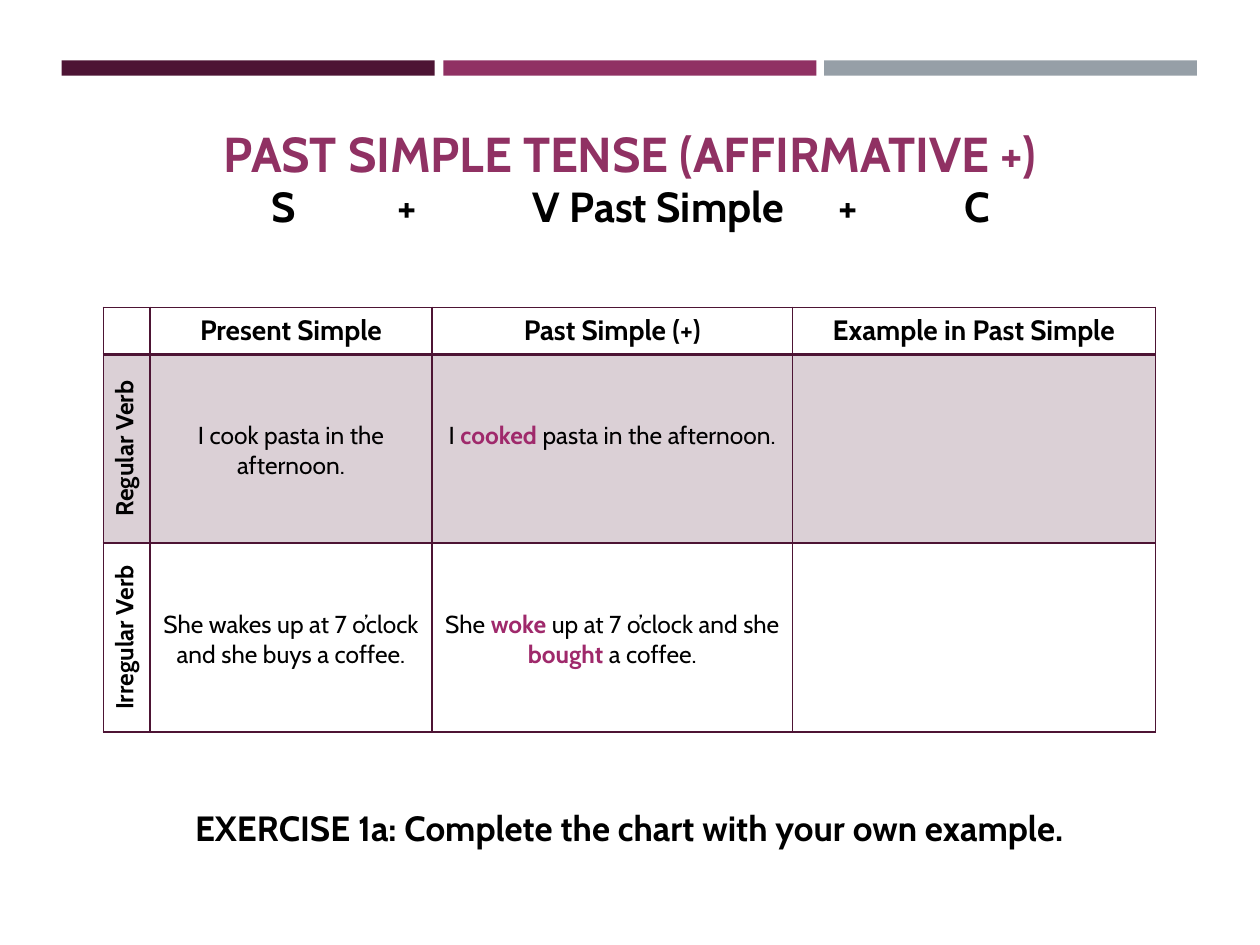
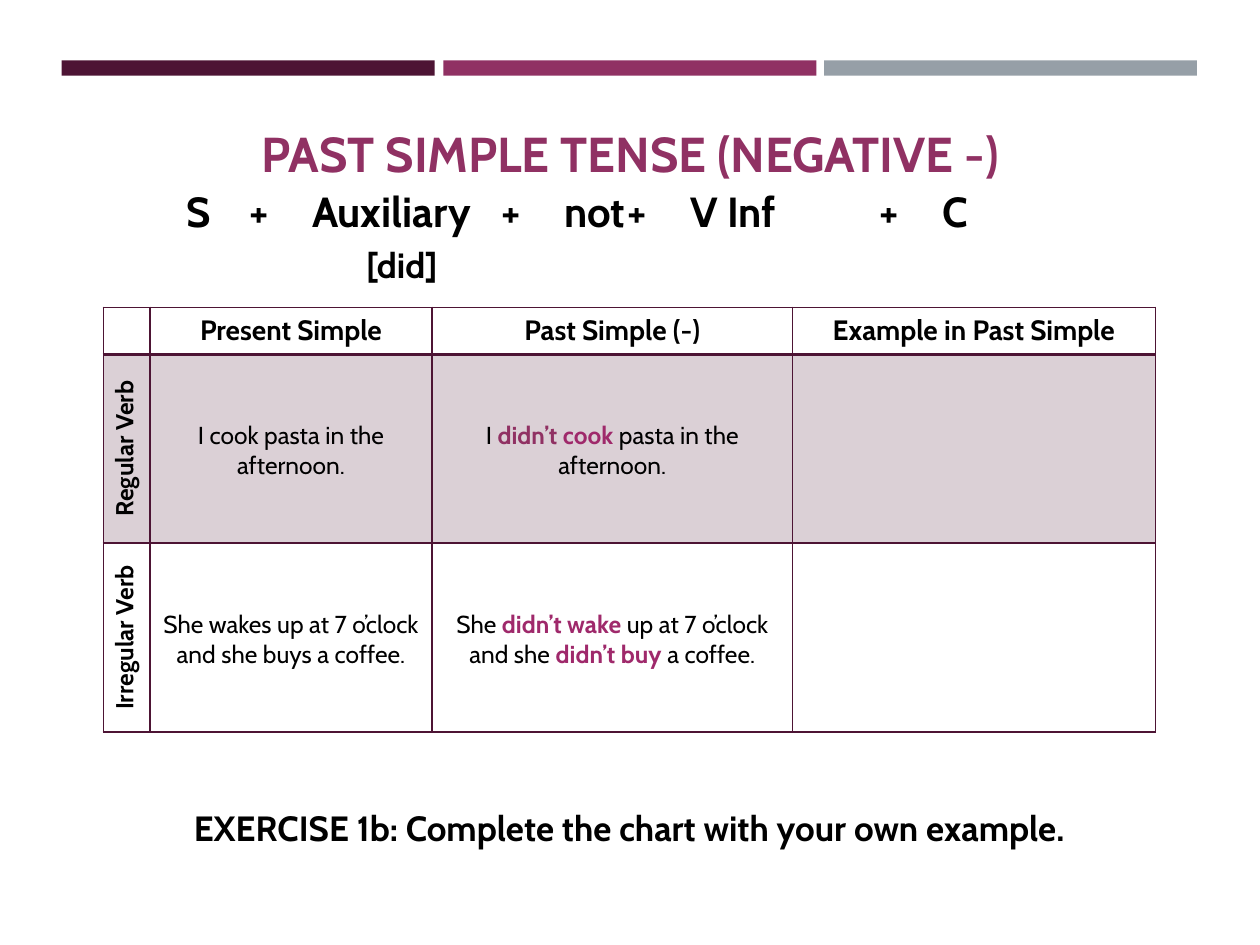
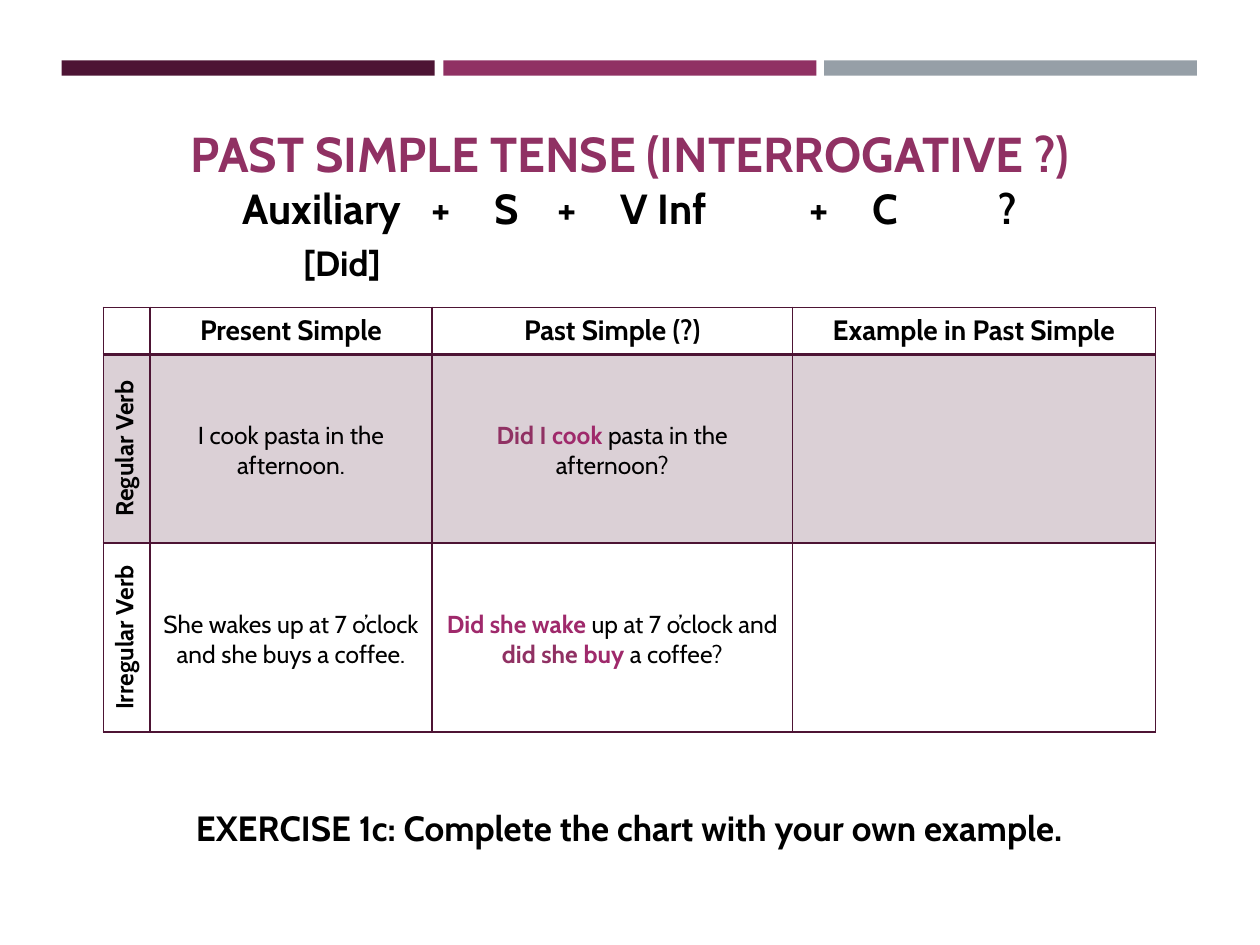
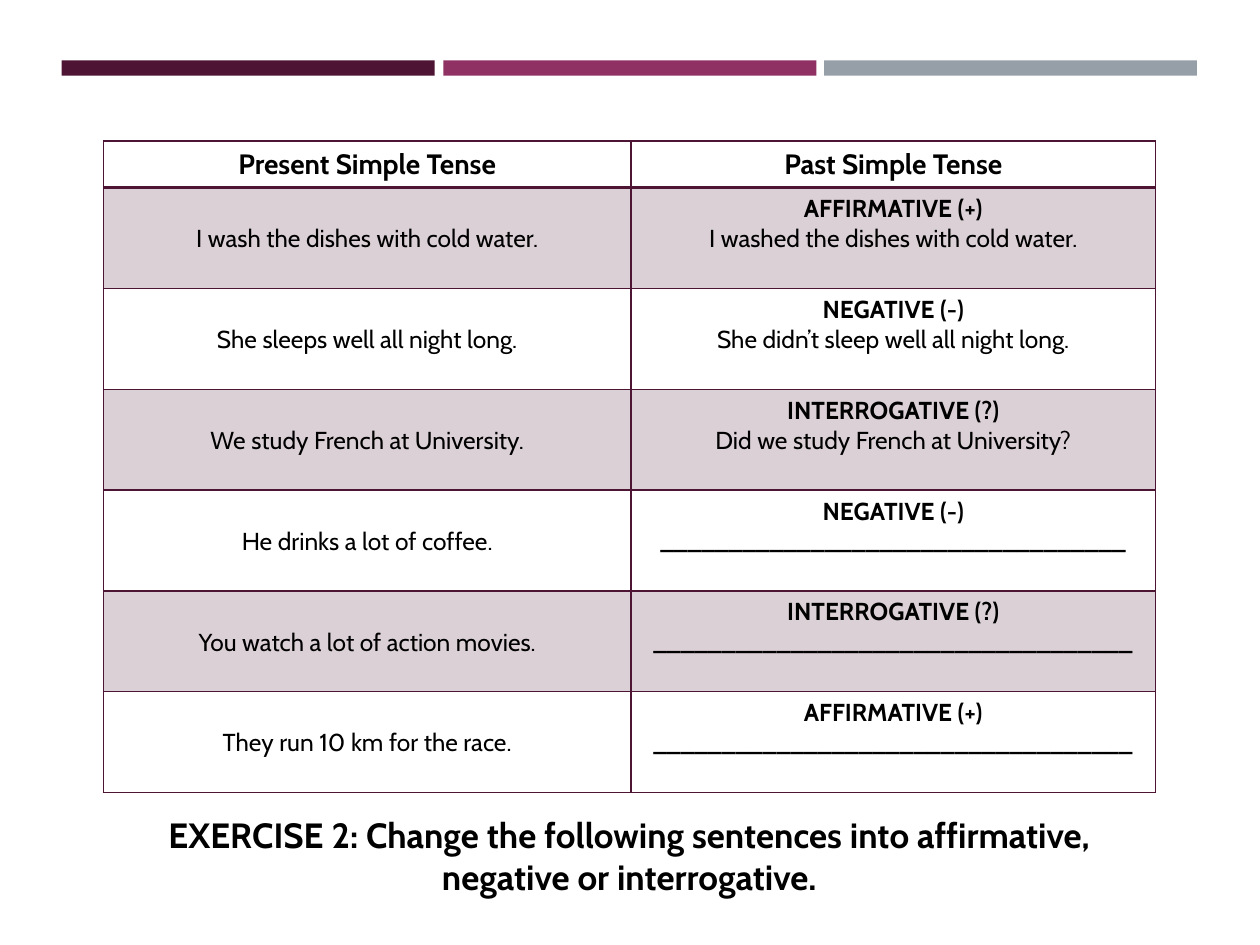
import pptx
import pptx.util
import pptx.dml.color
import pptx.enum.shapes
import pptx.enum.text
import pptx.oxml
import pptx.oxml.ns
import lxml.etree

Inches = pptx.util.Inches
qn = pptx.oxml.ns.qn
ALIGN = pptx.enum.text.PP_ALIGN
ANCHOR = pptx.enum.text.MSO_ANCHOR

COLORS = {
    "plum": "4D1434",
    "berry": "903163",
    "gray": "969FA7",
    "accent": "9F296B",
    "black": "000000",
}
BARS = [("plum", 0.49), ("berry", 3.52), ("gray", 6.54)]
TEXT_STYLES = {
    "title": {"size": 28, "color": "berry", "bold": True},
    "formula": {"size": 24, "color": "black", "bold": True},
    "exercise": {"size": 20, "color": "black", "bold": True},
    "header": {"size": 16, "color": "black", "bold": True},
    "label": {"size": 14, "color": "black", "bold": True},
    "body": {"size": 14, "color": "black", "bold": False},
    "accent": {"size": 14, "color": "accent", "bold": True},
    "berry": {"size": 14, "color": "berry", "bold": True},
}
LINE_HEIGHT = 0.24
REGULAR = [("I cook pasta in the afternoon.", "body")]
IRREGULAR = [("She wakes up at 7 o’clock and she buys a coffee.", "body")]

LESSONS = [
    {
        "kind": "AFFIRMATIVE +",
        "sign": "+",
        "exercise": "1a",
        "formulas": [
            ("S\t\t+\t\t V Past Simple\t+\t\tC", "formula", (1.47, 1.38, 7.07, 0.5), ALIGN.CENTER),
        ],
        "regular": [("I ", "body"), ("cooked", "accent"), (" pasta in the afternoon.", "body")],
        "irregular": [
            ("She ", "body"), ("woke", "accent"), (" up at 7 o’clock and she ", "body"),
            ("bought", "accent"), (" a coffee.", "body"),
        ],
    },
    {
        "kind": "NEGATIVE -",
        "sign": "-",
        "exercise": "1b",
        "formulas": [
            ("S\t+\tAuxiliary\t+\tnot\t+\tV Inf\t\t+\tC", "formula", (1.38, 1.42, 8.16, 0.5), ALIGN.LEFT),
            ("[did]", "exercise", (2.81, 1.88, 1.03, 0.44), ALIGN.LEFT),
        ],
        "regular": [
            ("I ", "body"), ("didn’t ", "berry"), ("cook", "accent"),
            (" pasta in the afternoon.", "body"),
        ],
        "irregular": [
            ("She ", "body"), ("didn’t wake", "accent"), (" up at 7 o’clock and she ", "body"),
            ("didn’t buy", "accent"), (" a coffee.", "body"),
        ],
    },
    {
        "kind": "INTERROGATIVE ?",
        "sign": "?",
        "exercise": "1c",
        "formulas": [
            ("Auxiliary\t+\tS\t+\tV Inf\t\t+\tC\t\t?", "formula", (1.28, 1.4, 7.44, 0.5), ALIGN.CENTER),
            ("[Did]", "exercise", (2.31, 1.87, 1.03, 0.44), ALIGN.LEFT),
        ],
        "regular": [("Did I ", "berry"), ("cook", "accent"), (" pasta in the afternoon?", "body")],
        "irregular": [
            ("Did she wake", "accent"), (" up at 7 o’clock and ", "body"),
            ("did she ", "berry"), ("buy", "accent"), (" a coffee?", "body"),
        ],
    },
]
PRACTICE = [
    ("I wash the dishes with cold water.", "AFFIRMATIVE (+)", "I washed the dishes with cold water.", "body"),
    ("She sleeps well all night long.", "NEGATIVE (-)", "She didn’t sleep well all night long.", "body"),
    ("We study French at University.", "INTERROGATIVE (?)", "Did we study French at University?", "body"),
    ("He drinks a lot of coffee.", "NEGATIVE (-)", "_" * 34, "label"),
    ("You watch a lot of action movies.", "INTERROGATIVE (?)", "_" * 35, "label"),
    ("They run 10 km for the race.", "AFFIRMATIVE (+)", "_" * 35, "label"),
]

pages = []
for lesson in LESSONS:
    headers = ["Present Simple", f"Past Simple ({lesson['sign']})", "Example in Past Simple"]
    pages.append({
        "texts": [
            (f"PAST SIMPLE TENSE ({lesson['kind']})", "title", (0.63, 0.93, 8.74, 0.71), ALIGN.CENTER),
            *lesson["formulas"],
            (f"EXERCISE {lesson['exercise']}: Complete the chart with your own example.",
             "exercise", (1.02, 6.35, 7.95, 0.44), ALIGN.CENTER),
        ],
        "top": 2.44,
        "columns": [0.37, 2.24, 2.86, 2.88],
        "row_height": 1.5,
        "offsets": [0, 2, 2, 0],
        "vertical_labels": True,
        "rows": [
            [[]] + [[[(header, "header")]] for header in headers],
            [[[("Regular Verb", "label")]], [REGULAR], [lesson["regular"]], []],
            [[[("Irregular Verb", "label")]], [IRREGULAR], [lesson["irregular"]], []],
        ],
    })
pages.append({
    "texts": [
        ("EXERCISE 2: Change the following sentences into affirmative, negative or interrogative.",
         "exercise", (1.02, 6.57, 7.95, 0.44), ALIGN.CENTER),
    ],
    "top": 1.12,
    "columns": [4.19, 4.16],
    "row_height": 0.8,
    "offsets": [1, 0],
    "vertical_labels": False,
    "rows": [[[[("Present Simple Tense", "header")]], [[("Past Simple Tense", "header")]]]] + [
        [[[(sentence, "body")]], [[(form, "label")], [(answer, style)]]]
        for sentence, form, answer, style in PRACTICE
    ],
})


def write_text(text_frame, paragraphs, alignment):
    for index, runs in enumerate(paragraphs):
        paragraph = text_frame.add_paragraph() if index else text_frame.paragraphs[0]
        paragraph.alignment = alignment
        paragraph._p.get_or_add_pPr().set("defTabSz", str(Inches(0.5)))
        for text, style_name in runs:
            style = TEXT_STYLES[style_name]
            run = paragraph.add_run()
            run.text = text
            values = {"name": "Cabin", "size": pptx.util.Pt(style["size"]), "bold": style["bold"]}
            for name, value in values.items():
                setattr(run.font, name, value)
            run.font.color.rgb = pptx.dml.color.RGBColor.from_string(COLORS[style["color"]])


def format_cell(cell, row_index):
    if row_index % 2:
        cell.fill.solid()
        cell.fill.fore_color.rgb = pptx.dml.color.RGBColor.from_string(COLORS["plum"])
        color = cell._tc.tcPr.find(qn("a:solidFill"))[0]
        lxml.etree.SubElement(color, qn("a:alpha"), val="20000")
    else:
        cell.fill.background()
    widths = {"L": 1, "R": 1, "T": 2 if row_index == 1 else 1, "B": 2 if row_index == 0 else 1}
    for position, (side, width) in enumerate(widths.items()):
        border = pptx.oxml.parse_xml(
            f'<a:ln{side} xmlns:a="http://schemas.openxmlformats.org/drawingml/2006/main" '
            f'w="{pptx.util.Pt(width)}"><a:solidFill><a:srgbClr val="{COLORS["plum"]}"/>'
            f'</a:solidFill></a:ln{side}>'
        )
        cell._tc.tcPr.insert(position, border)


presentation = pptx.Presentation()
presentation.slide_width = Inches(10)
presentation.slide_height = Inches(7.5)

for page in pages:
    slide = presentation.slides.add_slide(presentation.slide_layouts[6])

    for color, left in BARS:
        bar = slide.shapes.add_shape(
            pptx.enum.shapes.MSO_SHAPE.RECTANGLE, Inches(left), Inches(0.48), Inches(2.96), Inches(0.12)
        )
        bar.shadow.inherit = False
        bar.fill.solid()
        bar.fill.fore_color.rgb = pptx.dml.color.RGBColor.from_string(COLORS[color])
        bar.line.fill.background()

    for text, style_name, box, alignment in page["texts"]:
        text_box = slide.shapes.add_textbox(*[Inches(length) for length in box])
        text_box.text_frame.word_wrap = True
        if text.startswith("EXERCISE"):
            text_box.text_frame.vertical_anchor = ANCHOR.MIDDLE
        write_text(text_box.text_frame, [[(text, style_name)]], alignment)

    rows = page["rows"]
    heights = [0.37] + [page["row_height"]] * (len(rows) - 1)
    table = slide.shapes.add_table(
        len(rows), len(page["columns"]), Inches(0.82), Inches(page["top"]),
        Inches(sum(page["columns"])), Inches(sum(heights))
    ).table
    table.first_row = False
    table.horz_banding = False
    for column, width in zip(table.columns, page["columns"]):
        column.width = Inches(width)
    for row, height in zip(table.rows, heights):
        row.height = Inches(height)

    for row_index, contents in enumerate(rows):
        for column_index, paragraphs in enumerate(contents):
            cell = table.cell(row_index, column_index)
            format_cell(cell, row_index)
            write_text(cell.text_frame, paragraphs, ALIGN.CENTER)
            if not paragraphs:
                lxml.etree.SubElement(cell.text_frame.paragraphs[0]._p, qn("a:endParaRPr"), sz="1400")
            if row_index:
                cell.margin_top = Inches(0.05 + LINE_HEIGHT * page["offsets"][column_index])
                if page["vertical_labels"] and column_index == 0:
                    cell._tc.tcPr.set("vert", "vert270")

presentation.save("out.pptx")
